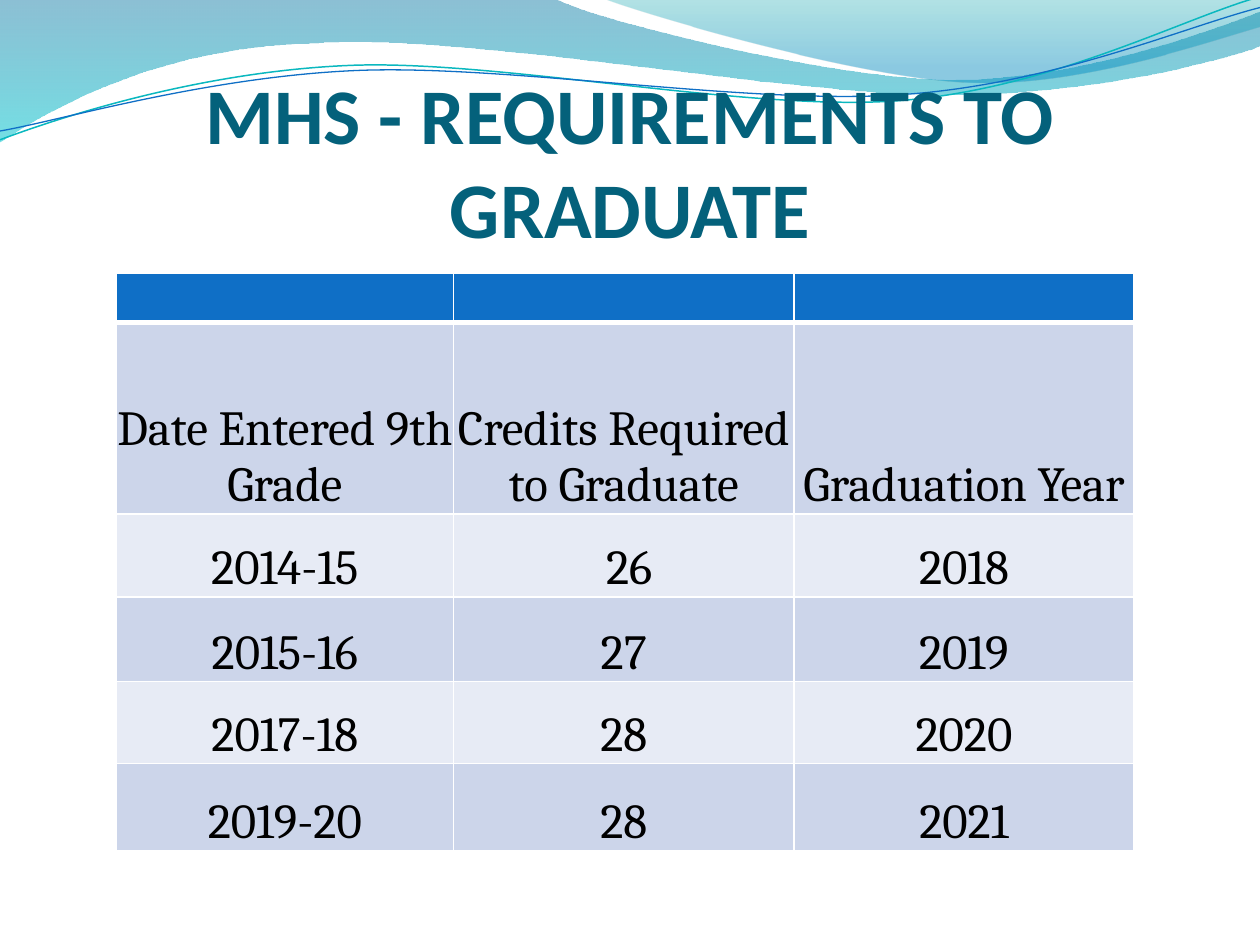
from lxml import etree
from pptx import Presentation
from pptx.dml.color import RGBColor
from pptx.enum.text import MSO_ANCHOR, PP_ALIGN
from pptx.oxml.ns import qn
from pptx.util import Inches, Pt

CENTER = PP_ALIGN.CENTER
BOTTOM = MSO_ANCHOR.BOTTOM

WHITE = RGBColor(0xFF, 0xFF, 0xFF)
BLACK = RGBColor(0x00, 0x00, 0x00)
TITLE_TEAL = RGBColor(0x04, 0x61, 0x7B)
HEADER_BLUE = RGBColor(0x0F, 0x6F, 0xC6)
LINE_TEAL = RGBColor(0x0A, 0xB8, 0xBF)
BAND_DARK = RGBColor(0xCC, 0xD5, 0xEA)
BAND_LIGHT = RGBColor(0xE7, 0xEB, 0xF5)
WAVE_BLUE = RGBColor(0x00, 0x74, 0xA1)
WAVE_AQUA = RGBColor(0x00, 0xC6, 0xCF)
CREST_TEAL = RGBColor(0x00, 0xA1, 0xA9)
CREST_BLUE = RGBColor(0x00, 0x8B, 0xBF)

# Outlines in inches: a pair is a corner, six numbers are a Bezier segment
WAVE = [
    (0, 0), (4.4, -0.01),
    (4.76, 0.17, 6.64, 0.63, 7.58, 0.63), (8.53, 0.63, 9.58, 0.26, 10, 0.09),
    (10.01, 0.36),
    (9.83, 0.44, 8.7, 0.76, 7.46, 0.75), (6.22, 0.75, 3.82, 0.28, 2.57, 0.34),
    (1.29, 0.36, 0.46, 0.83, -0.01, 1.13), (0, 0),
]
CREST = [
    (4.79, -0.01),
    (5.09, 0.11, 6.82, 0.62, 7.69, 0.65), (8.56, 0.69, 9.61, 0.32, 10, 0.21),
    (10, 0), (4.79, -0.01),
]
TEAL_CURVE = [
    (0, 1.11),
    (0.48, 0.93, 1.58, 0.57, 2.77, 0.52), (3.95, 0.47, 5.93, 0.89, 7.13, 0.8),
    (8.33, 0.71, 9.38, 0.15, 9.98, -0.02),
]
BLUE_CURVE = [
    (0, 1.04),
    (0.47, 0.96, 1.64, 0.61, 2.83, 0.56), (4.03, 0.51, 5.97, 0.84, 7.17, 0.75),
    (8.36, 0.67, 9.41, 0.21, 10, 0.06),
]

COLUMN_WIDTHS = [2.68, 2.7, 2.7]
ROW_HEIGHTS = [0.39, 1.52, 0.66, 0.67, 0.65, 0.69]
ROWS = [
    ("", "", ""),
    ("Date Entered 9th Grade", "Credits Required to Graduate", "Graduation Year"),
    ("2014-15", " 26", "2018"),
    ("2015-16", "27", "2019"),
    ("2017-18", "28", "2020"),
    ("2019-20", "28", "2021"),
]


def bend_segment(line_element, segment, left, top):
    """Turn a straight segment of a shape at left, top into a Bezier curve."""
    line_element.tag = qn("a:cubicBezTo")
    controls = zip(segment[:4:2], segment[1:4:2])
    for index, (x, y) in enumerate(controls):
        point = etree.Element(
            qn("a:pt"), x=str(Inches(x) - left), y=str(Inches(y) - top))
        line_element.insert(index, point)


def add_outline(slide, outline, closed):
    anchors = [(Inches(segment[-2]), Inches(segment[-1])) for segment in outline]
    builder = slide.shapes.build_freeform(*anchors[0])
    builder.add_line_segments(anchors[1:], close=closed)
    shape = builder.convert_to_shape()
    shape.shadow.inherit = False
    lines = list(shape._element.spPr.iter(qn("a:lnTo")))
    for line_element, segment in zip(lines, outline[1:]):
        if len(segment) == 6:
            bend_segment(line_element, segment, shape.left, shape.top)
    return shape


def add_wave(slide, outline, stops):
    """Closed area with a downward gradient of (position, colour, opacity %)."""
    shape = add_outline(slide, outline, closed=True)
    shape.line.fill.background()
    shape.fill.gradient()
    shape.fill.gradient_angle = 270
    for stop, (position, color, _) in zip(shape.fill.gradient_stops, stops):
        stop.position = position
        stop.color.rgb = color
    colors = shape._element.spPr.iter(qn("a:srgbClr"))
    for color_element, (_, _, opacity) in zip(colors, stops):
        etree.SubElement(color_element, qn("a:alpha"), val=str(opacity * 1000))


def add_curve(slide, outline, color, width):
    shape = add_outline(slide, outline, closed=False)
    shape.fill.background()
    shape.line.color.rgb = color
    shape.line.width = Pt(width)


def write_text(text_frame, text, *, font, size, color, bold=False):
    text_frame.word_wrap = True
    paragraph = text_frame.paragraphs[0]
    paragraph.alignment = CENTER
    run = paragraph.add_run()
    run.text = text
    run.font.name = font
    run.font.size = Pt(size)
    run.font.bold = bold
    run.font.color.rgb = color


def add_title(slide, text):
    frame = slide.shapes.add_textbox(
        Inches(0.5), Inches(0.77), Inches(9), Inches(1.25)).text_frame
    frame.margin_left = frame.margin_right = frame.margin_bottom = 0
    frame.margin_top = Inches(0.05)
    frame.vertical_anchor = BOTTOM
    write_text(frame, text, font="Calibri", size=45, color=TITLE_TEAL, bold=True)


def set_borders(cell, color, bottom_width):
    properties = cell._tc.get_or_add_tcPr()
    sides = (("a:lnL", 1), ("a:lnR", 1), ("a:lnT", 1), ("a:lnB", bottom_width))
    for index, (side, width) in enumerate(sides):
        line = etree.Element(qn(side), w=str(Pt(width)))
        fill = etree.SubElement(line, qn("a:solidFill"))
        etree.SubElement(fill, qn("a:srgbClr"), val=str(color))
        properties.insert(index, line)


def add_credit_table(slide):
    table = slide.shapes.add_table(
        len(ROWS), len(COLUMN_WIDTHS), Inches(0.92), Inches(2.17),
        Inches(sum(COLUMN_WIDTHS)), Inches(sum(ROW_HEIGHTS))).table
    for column, width in zip(table.columns, COLUMN_WIDTHS):
        column.width = Inches(width)
    for row_index, (row, height) in enumerate(zip(table.rows, ROW_HEIGHTS)):
        row.height = Inches(height)
        band = BAND_DARK if row_index % 2 else BAND_LIGHT
        for cell, text in zip(row.cells, ROWS[row_index]):
            cell.fill.solid()
            cell.fill.fore_color.rgb = band if row_index else HEADER_BLUE
            set_borders(cell, WHITE, bottom_width=1 if row_index else 3)
            if text:
                cell.margin_left = cell.margin_right = cell.margin_top = Inches(0.01)
                cell.margin_bottom = 0
                cell.vertical_anchor = BOTTOM
                write_text(cell.text_frame, text, font="Cambria", size=28, color=BLACK)
            else:
                cell.text_frame.paragraphs[0].font.size = Pt(16)


def main():
    presentation = Presentation()
    presentation.slide_width = Inches(10)
    presentation.slide_height = Inches(7.5)
    slide = presentation.slides.add_slide(presentation.slide_layouts[6])

    # Decorative waves along the top edge
    add_wave(slide, WAVE, [(0, WAVE_BLUE, 45), (1, WAVE_AQUA, 55)])
    add_wave(slide, CREST, [(0, CREST_TEAL, 30), (0.8, CREST_BLUE, 45)])
    add_curve(slide, TEAL_CURVE, LINE_TEAL, 0.85)
    add_curve(slide, BLUE_CURVE, HEADER_BLUE, 0.75)

    # Title and requirements
    add_title(slide, "MHS - REQUIREMENTS TO GRADUATE")
    add_credit_table(slide)

    presentation.save("out.pptx")


if __name__ == "__main__":
    main()
